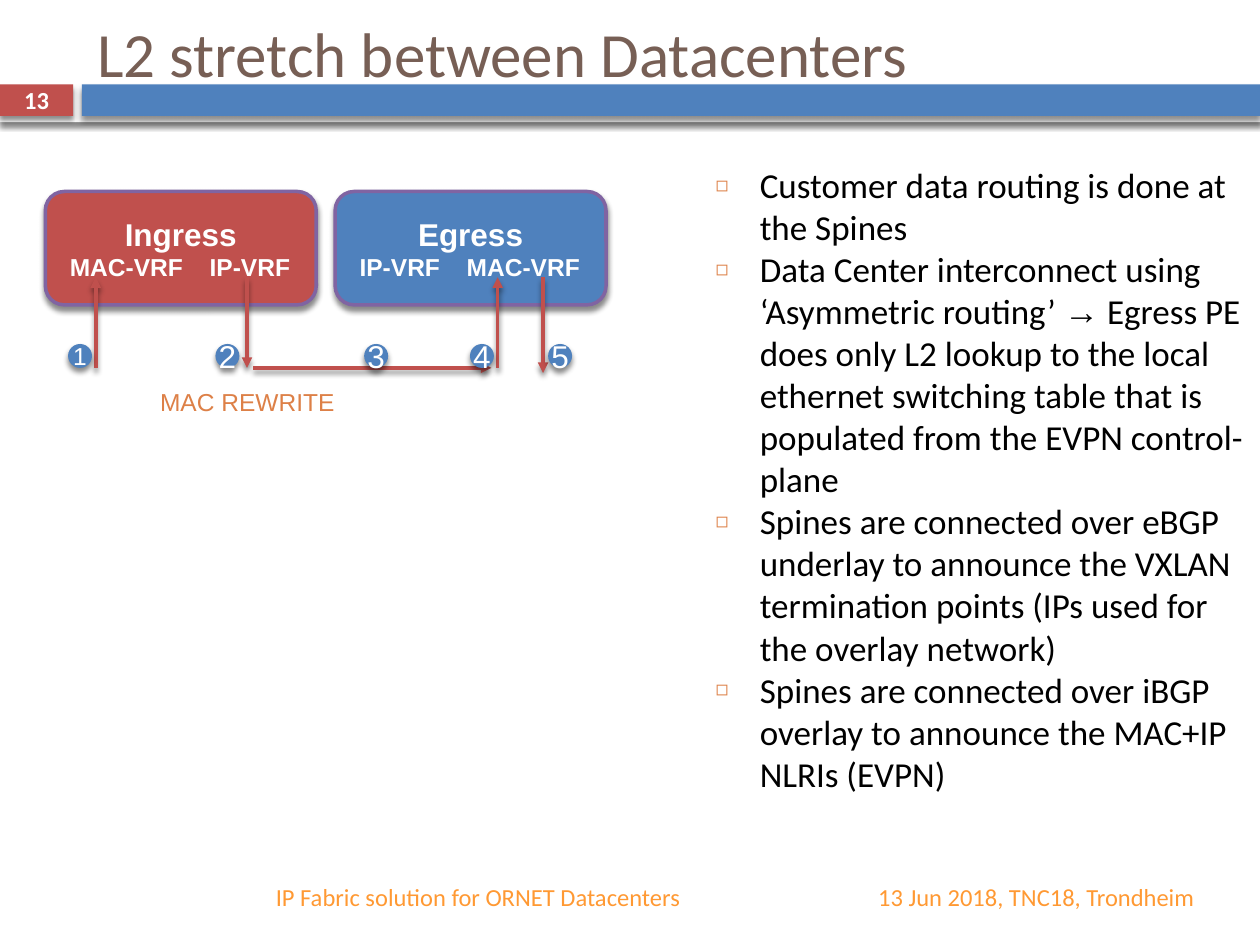
import pptx
import pptx.dml.color
import pptx.enum.shapes
import pptx.enum.text
import pptx.oxml
import pptx.oxml.ns
import pptx.util

RGB = pptx.dml.color.RGBColor
KIND = pptx.enum.shapes.MSO_SHAPE
ALIGN = pptx.enum.text.PP_ALIGN
ANCHOR = pptx.enum.text.MSO_ANCHOR
Pt = pptx.util.Pt

WHITE = RGB(0xFF, 0xFF, 0xFF)
BLACK = RGB(0x00, 0x00, 0x00)
RED = RGB(0xC0, 0x50, 0x4D)
BLUE = RGB(0x4F, 0x81, 0xBD)
PURPLE = RGB(0x80, 0x64, 0xA2)
BROWN = RGB(0x77, 0x5F, 0x55)
AMBER = RGB(0xFF, 0x99, 0x33)
ORANGE = RGB(0xDD, 0x80, 0x47)

COLS, ROWS = 100, 75
CELL = pptx.util.Inches(0.1)

ITEMS = [
    "Customer data routing is done at the Spines",
    "Data Center interconnect using ‘Asymmetric routing’ → Egress PE does only L2 lookup "
    "to the local ethernet switching table that is populated from the EVPN control-plane",
    "Spines are connected over eBGP underlay to announce the VXLAN termination points "
    "(IPs used for the overlay network)",
    "Spines are connected over iBGP overlay to announce the MAC+IP NLRIs (EVPN)",
]


def cells(*counts):
    """Turn grid counts into lengths."""
    return [round(n * CELL) for n in counts]


def sub(box, x, y, w, h):
    """Return a box placed relative to the corner of another."""
    return box[0] + x, box[1] + y, w, h


def xml(parent, body):
    """Append a drawing element to a parent."""
    space = pptx.oxml.ns.nsdecls("a")
    head, tail = body.split(" ", 1)
    parent.append(pptx.oxml.parse_xml(f"{head} {space} {tail}"))


def shade(shape):
    """Give a shape or connector a soft shadow below it."""
    xml(shape._element.spPr,
        f'<a:effectLst ><a:outerShdw blurRad="{Pt(3)}" dist="{Pt(2.4)}" dir="5400000" rotWithShape="0">'
        '<a:srgbClr val="000000"><a:alpha val="45000"/></a:srgbClr></a:outerShdw></a:effectLst>')


def style(para, size, color, face="Calibri", bold=False, align=ALIGN.LEFT):
    """Format a paragraph and its runs."""
    para.alignment = align
    for run in para.runs:
        run.font.size, run.font.name, run.font.bold = Pt(size), face, bold
        run.font.color.rgb = color


def inset(frame, x, y, wrap=True):
    """Set the margins and wrapping of a text frame."""
    frame.margin_left = frame.margin_right = pptx.util.Inches(x)
    frame.margin_top = frame.margin_bottom = pptx.util.Inches(y)
    frame.word_wrap = wrap
    frame.auto_size = pptx.enum.text.MSO_AUTO_SIZE.NONE


def solid(slide, kind, box, fill, edge=None):
    """Draw a filled shape with a shadow."""
    shape = slide.shapes.add_shape(kind, *cells(*box))
    shape.fill.solid()
    shape.fill.fore_color.rgb = fill
    if edge is None:
        shape.line.fill.background()
    else:
        shape.line.color.rgb, shape.line.width = edge, Pt(2)
    shade(shape)
    return shape


def note(slide, box, text, align, color=AMBER, bold=False):
    """Write one line of small text in the middle of a box."""
    frame = slide.shapes.add_textbox(*cells(*box)).text_frame
    inset(frame, 0.1, 0.05)
    frame.vertical_anchor = ANCHOR.MIDDLE
    frame.text = text
    style(frame.paragraphs[0], 14, color, bold=bold, align=align)


def place(slide, holder, box):
    """Move a placeholder into a box and to the front."""
    holder.left, holder.top, holder.width, holder.height = cells(*box)
    slide.shapes._spTree.append(holder._element)
    inset(holder.text_frame, 0.1, 0.05)
    return holder.text_frame


def header(slide, box):
    """Draw the title, the bars and the page number."""
    for x, y, w, h, fill in ((0, 6.2, box[2], 3.5, WHITE), (0, 6.7, 5.8, 2.5, RED),
                             (6.5, 6.7, box[2] - 6.5, 2.5, BLUE)):
        solid(slide, KIND.RECTANGLE, sub(box, x, y, w, h), fill)
    frame = place(slide, slide.shapes.title, sub(box, 6.7, 0, 89.2, 8.3))
    frame.vertical_anchor = ANCHOR.MIDDLE
    frame.text = "L2 stretch between Datacenters"
    style(frame.paragraphs[0], 36, BROWN)
    note(slide, sub(box, 0, 6.6, 5.8, 2.7), "13", ALIGN.CENTER, WHITE, True)


def footer(slide, box):
    """Write the talk name and the date."""
    note(slide, sub(box, 0, 0, 40.6, box[3]), "IP Fabric solution for ORNET Datacenters", ALIGN.RIGHT)
    note(slide, sub(box, 43.1, 0, 38.3, box[3]), "13 Jun 2018, TNC18, Trondheim", ALIGN.RIGHT)


def bullets(slide, box):
    """Write the list of points."""
    frame = place(slide, slide.placeholders[1], box)
    frame.vertical_anchor = ANCHOR.TOP
    hang = cells(3.5)[0]
    for i, item in enumerate(ITEMS):
        para = frame.add_paragraph() if i else frame.paragraphs[0]
        para.space_before = Pt(0)
        props = para._p.get_or_add_pPr()
        props.set("marL", str(hang))
        props.set("indent", str(-hang))
        xml(props, '<a:buClr ><a:srgbClr val="DD8047"/></a:buClr>')
        xml(props, '<a:buSzPct val="60000"/>')
        xml(props, '<a:buChar char="◻"/>')
        for piece in filter(None, item.partition("→")):
            para.add_run().text = piece
        style(para, 20, BLACK)
        for run in para.runs:
            if run.text == "→":
                run.font.name = "Arial"


def node(slide, box, name, parts, stops, fill):
    """Draw a switch with its name and its two tables."""
    frame = solid(slide, KIND.ROUNDED_RECTANGLE, box, fill, PURPLE).text_frame
    inset(frame, 0, 0.05)
    frame.vertical_anchor = ANCHOR.MIDDLE
    frame.text = name + "\n" + "".join("\t" + part for part in parts)
    top, low = frame.paragraphs
    style(top, 18, WHITE, "Arial", True, ALIGN.CENTER)
    tabs = "".join(f'<a:tab pos="{pos}" algn="ctr"/>' for pos in cells(*stops))
    xml(low._p.get_or_add_pPr(), f"<a:tabLst >{tabs}</a:tabLst>")
    style(low, 14, WHITE, "Arial", True)


def arrow(slide, box, start, end):
    """Draw an arrow between two points of a box."""
    ends = [box[i % 2] + n for i, n in enumerate(start + end)]
    line = slide.shapes.add_connector(pptx.enum.shapes.MSO_CONNECTOR.STRAIGHT, *cells(*ends))
    line.line.color.rgb, line.line.width = RED, Pt(2)
    xml(line.line._get_or_add_ln(), '<a:tailEnd type="triangle"/>')
    shade(line)


def flow(slide, box):
    """Draw the packet path from ingress to egress."""
    node(slide, sub(box, 0, 0, 21.5, 9), "Ingress", ("MAC-VRF", "IP-VRF"), (6, 15.8), RED)
    node(slide, sub(box, 23, 0, 21.5, 9), "Egress", ("IP-VRF", "MAC-VRF"), (4.7, 14.5), BLUE)
    high, low = 6.8, 14
    for start, end in (((4, low), (4, high)), ((35.9, low), (35.9, high)),
                       ((16, high), (16, low)), ((16.5, low), (35.4, low)),
                       ((39.5, high), (39.5, 14.4))):
        arrow(slide, box, start, end)
    for step, x in enumerate((1.8, 13.5, 25.3, 33.7, 39.9), 1):
        frame = solid(slide, KIND.OVAL, sub(box, x, 12.1, 1.9, 1.9), BLUE).text_frame
        inset(frame, 0, 0, False)
        frame.vertical_anchor = ANCHOR.MIDDLE
        frame.text = str(step)
        style(frame.paragraphs[0], 14 if step == 1 else 18, WHITE, "Arial", align=ALIGN.CENTER)
    frame = slide.shapes.add_textbox(*cells(*sub(box, 8.6, 15.6, 14.9, 2.8))).text_frame
    inset(frame, 0.05, 0.02, False)
    frame.text = "MAC REWRITE"
    frame.paragraphs[0].line_spacing = 0.9
    style(frame.paragraphs[0], 14, ORANGE, "Arial")


def main():
    """Build and save the slide."""
    deck = pptx.Presentation()
    deck.slide_width, deck.slide_height = cells(COLS, ROWS)
    slide = deck.slides.add_slide(deck.slide_layouts[1])
    header(slide, (0, 0, COLS, 9.7))
    footer(slide, (14.4, 69.2, 81.4, 4))
    bullets(slide, (55.8, 12.5, 44.2, 54.2))
    flow(slide, (3.6, 15.2, 44.5, 18.4))
    deck.save("out.pptx")


if __name__ == "__main__":
    main()
